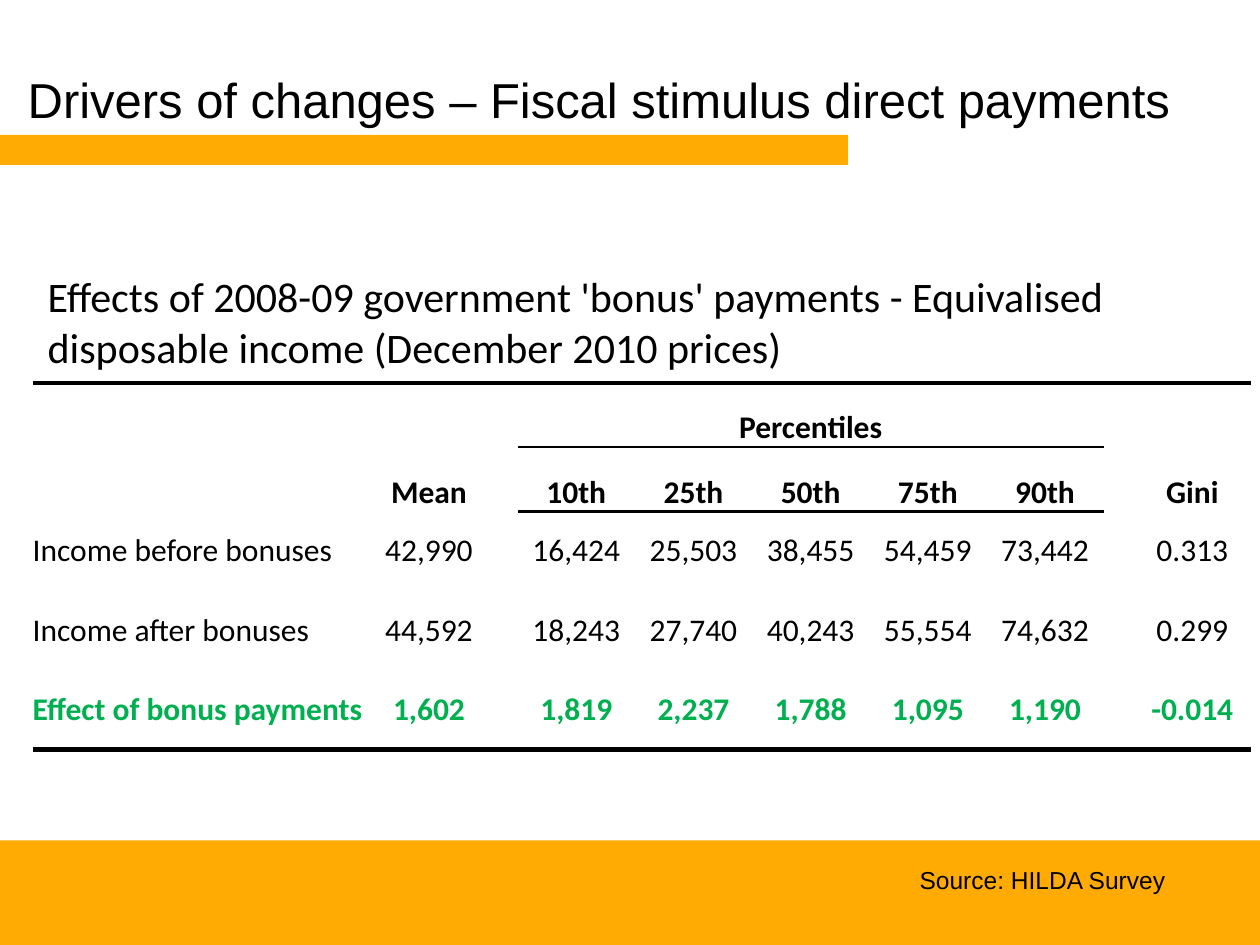
from dataclasses import dataclass

from lxml import etree
from pptx import Presentation
from pptx import util as u
from pptx.dml.color import RGBColor
from pptx.enum import shapes, text
from pptx.oxml.ns import qn

WIDE, HIGH = u.Inches(10), u.Inches(7.5)
AMBER = RGBColor(0xFF, 0xAB, 0x03)
BLACK = RGBColor(0, 0, 0)
GREEN = RGBColor(0x00, 0xB0, 0x50)
PLAIN_STYLE = "{2D5ABB26-0587-4C30-8999-92F81FD0307C}"


@dataclass(frozen=True)
class Box:
    """Place and size in percent of the slide's width and height."""
    x: float
    y: float
    w: float
    h: float

    def place(self) -> tuple:
        return (u.Emu(int(WIDE * self.x / 100)), u.Emu(int(HIGH * self.y / 100)),
                u.Emu(int(WIDE * self.w / 100)), u.Emu(int(HIGH * self.h / 100)))


@dataclass(frozen=True)
class Font:
    name: str
    size: int
    bold: bool = False
    color: RGBColor = BLACK


@dataclass(frozen=True)
class Row:
    label: str
    mean: str
    ranks: tuple
    gini: str
    font: Font
    anchor: text.MSO_ANCHOR = text.MSO_ANCHOR.MIDDLE

    def cells(self) -> list:
        return [self.label, self.mean, "", *self.ranks, "", self.gini]


BODY = Font("Calibri", 18)
HEAD = Font("Calibri", 18, True)
GAIN = Font("Calibri", 18, True, GREEN)

BARS = [Box(0, 88.93, 100, 11.07), Box(0, 14.27, 67.3, 3.2)]
GRID = Box(2.6, 40.53, 94.8, 38.8)
COLS = [26.8, 9.3, 1.3] + [9.3] * 5 + [1.6, 9.3]
TALL = [6.8] * 2 + [8.4] * 3
FIRST, LAST = 3, 7  # columns under the heading "Percentiles"

ROWS = [
    Row("", "Mean", ("10th", "25th", "50th", "75th", "90th"), "Gini",
        HEAD, text.MSO_ANCHOR.BOTTOM),
    Row("Income before bonuses", "42,990",
        ("16,424", "25,503", "38,455", "54,459", "73,442"), "0.313", BODY),
    Row("Income after bonuses", "44,592",
        ("18,243", "27,740", "40,243", "55,554", "74,632"), "0.299", BODY),
    Row("Effect of bonus payments", "1,602",
        ("1,819", "2,237", "1,788", "1,095", "1,190"), "-0.014", GAIN),
]


def write(frame, words: str, font: Font, align=text.PP_ALIGN.LEFT) -> None:
    para = frame.paragraphs[0]
    para.alignment = align
    run = para.add_run()
    run.text = words
    run.font.name = font.name
    run.font.size = u.Pt(font.size)
    run.font.bold = font.bold
    run.font.color.rgb = font.color


def bar(slide, box: Box) -> None:
    shape = slide.shapes.add_shape(shapes.MSO_SHAPE.RECTANGLE, *box.place())
    shape.shadow.inherit = False
    shape.fill.solid()
    shape.fill.fore_color.rgb = AMBER
    shape.line.fill.background()


def title(slide, words: str, box: Box) -> None:
    shape = slide.shapes.title
    shape.left, shape.top, shape.width, shape.height = box.place()
    shape.text_frame.vertical_anchor = text.MSO_ANCHOR.MIDDLE
    write(shape.text_frame, words, Font("Arial", 28))


def note(slide, words: str, font: Font, box: Box) -> None:
    frame = slide.shapes.add_textbox(*box.place()).text_frame
    frame.word_wrap = True
    write(frame, words, font)


def rule(cell, side: str, width: float) -> None:
    """Draw a black border on one side, lnT or lnB, of a cell."""
    line = etree.SubElement(cell._tc.get_or_add_tcPr(), qn(f"a:{side}"),
                            w=str(u.Pt(width)))
    fill = etree.SubElement(line, qn("a:solidFill"))
    etree.SubElement(fill, qn("a:srgbClr"), val=str(BLACK))


def fill_cell(cell, words: str, row: Row, align) -> None:
    cell.margin_left = cell.margin_right = cell.margin_top = cell.margin_bottom = 0
    cell.vertical_anchor = row.anchor
    if words:
        write(cell.text_frame, words, row.font, align)


def grid(slide) -> None:
    table = slide.shapes.add_table(len(TALL), len(COLS), *GRID.place()).table
    table.first_row = table.horz_banding = False
    table._tbl.tblPr.find(qn("a:tableStyleId")).text = PLAIN_STYLE
    for col, share in zip(table.columns, COLS):
        col.width = u.Emu(int(WIDE * share / 100))
    for row, share in zip(table.rows, TALL):
        row.height = u.Emu(int(HIGH * share / 100))

    table.cell(0, FIRST).merge(table.cell(0, LAST))
    fill_cell(table.cell(0, FIRST), "Percentiles", ROWS[0], text.PP_ALIGN.CENTER)
    for r, row in enumerate(ROWS, 1):
        for c, words in enumerate(row.cells()):
            align = text.PP_ALIGN.CENTER if c else text.PP_ALIGN.LEFT
            fill_cell(table.cell(r, c), words, row, align)

    for c in range(len(COLS)):
        rule(table.cell(0, c), "lnT", 3)
        if FIRST <= c <= LAST:
            rule(table.cell(0, c), "lnB", 1.5)
            rule(table.cell(1, c), "lnT", 1.5)
        rule(table.cell(len(ROWS), c), "lnB", 3)
    for cell in table.iter_cells():
        cell.fill.background()


def main() -> None:
    deck = Presentation()
    deck.slide_width, deck.slide_height = WIDE, HIGH
    slide = deck.slides.add_slide(deck.slide_layouts[5])
    for box in BARS:
        bar(slide, box)
    title(slide, "Drivers of changes – Fiscal stimulus direct payments",
          Box(1.2, 4.8, 97.6, 11.33))
    grid(slide)
    note(slide, "Effects of 2008-09 government 'bonus' payments - Equivalised "
         "disposable income (December 2010 prices)",
         Font("Calibri", 24), Box(2.8, 28, 94.5, 12.13))
    note(slide, "Source: HILDA Survey", Font("Arial", 14), Box(72, 90.93, 25.2, 4.53))
    deck.save("out.pptx")


if __name__ == "__main__":
    main()
